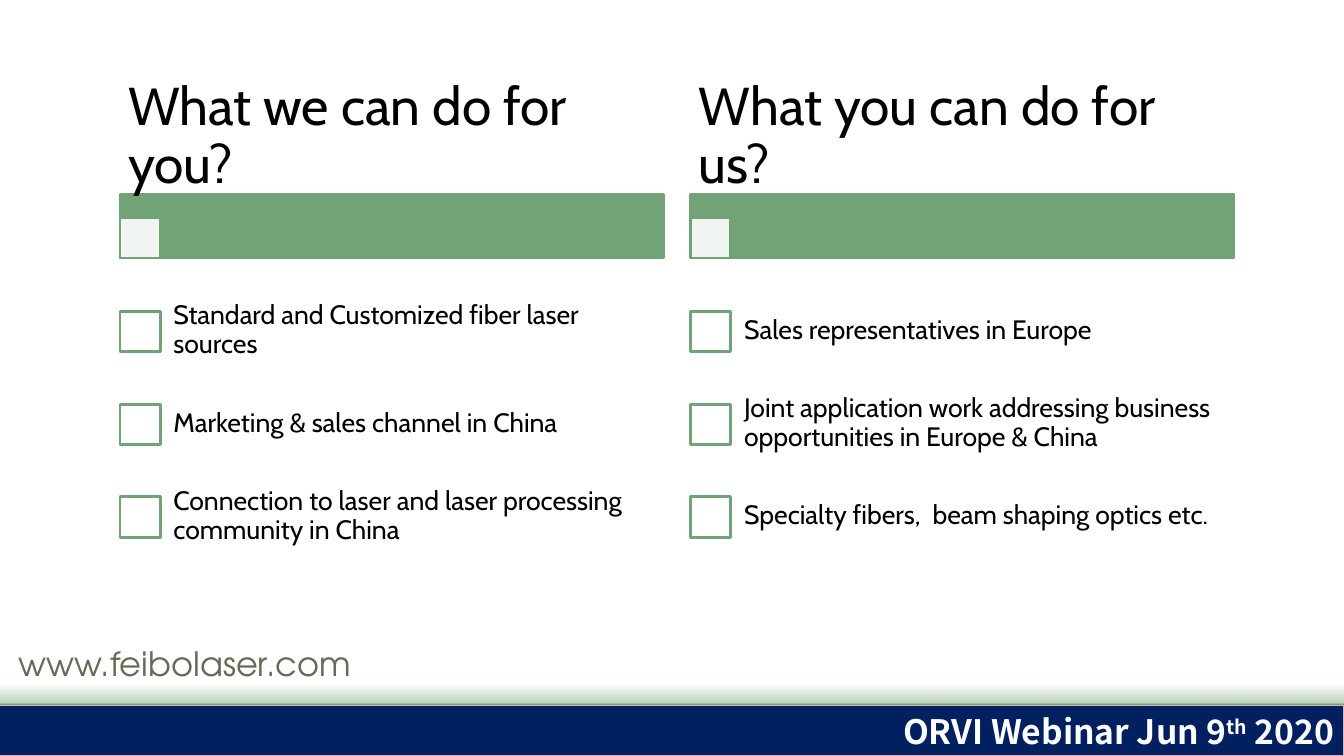
"""Build the slide on what each partner can do for the other."""
import pptx
import pptx.dml.color
import pptx.enum.shapes
import pptx.enum.text
import pptx.oxml.ns
import pptx.util
from lxml import etree
from pptx.util import Inches

COLUMNS = [
    ("What we can do for you?", [
        "Standard and Customized fiber laser sources",
        "Marketing & sales channel in China",
        "Connection to laser and laser processing community in China",
    ]),
    ("What you can do for us?", [
        "Sales representatives in Europe",
        "Joint application work addressing business opportunities in Europe & China",
        "Specialty fibers,  beam shaping optics etc.",
    ]),
]
WEBSITE = "www.feibolaser.com"
EVENT = [("ORVI Webinar Jun 9", False), ("th", True), (" 2020", False)]

COLORS = {
    "green": "72A376", "pale": "B4CDB6", "white": "FFFFFF", "black": "000000",
    "navy": "002060", "rose": "E4B2B2", "olive": "676A55",
}
BODY_FONT, WEB_FONT, EVENT_FONT = "Cabin", "TeX Gyre Adventor", "Noto Sans CJK SC"
SLIDE_WIDTH, SLIDE_HEIGHT = 13.33, 7.5
COLUMN_LEFT, COLUMN_STEP, COLUMN_WIDTH = 1.19, 5.66, 5.39
HEADING_TOP, HEADING_HEIGHT = 0.79, 1.14
BAR_TOP, BAR_HEIGHT = 1.93, 0.63
ITEM_TOP, ITEM_HEIGHT, ITEM_INDENT = 2.82, 0.92, 0.38
SQUARE = 0.4
FOOTER_TOP, FADE_HEIGHT = 7.0, 0.22
MIDDLE = pptx.enum.text.MSO_ANCHOR.MIDDLE


def rgb(name):
    return pptx.dml.color.RGBColor.from_string(COLORS[name])


def add_rectangle(slide, left, top, width, height, fill, line=None, points=2):
    kind = pptx.enum.shapes.MSO_SHAPE.RECTANGLE
    box = slide.shapes.add_shape(kind, Inches(left), Inches(top), Inches(width), Inches(height))
    box.shadow.inherit = False
    box.fill.solid()
    box.fill.fore_color.rgb = rgb(fill)
    if line:
        box.line.color.rgb = rgb(line)
        box.line.width = pptx.util.Pt(points)
    else:
        box.line.fill.background()
    return box


def style_span(span, font, size, color, bold=False):
    span.font.name = font
    span.font.size = pptx.util.Pt(size)
    span.font.color.rgb = rgb(color)
    span.font.bold = bold


def write_text(box, text, font, size, color, side=0.1, edge=0.05, anchor=MIDDLE):
    frame = box.text_frame
    frame.text = text
    frame.word_wrap = True
    frame.auto_size = pptx.enum.text.MSO_AUTO_SIZE.NONE
    frame.vertical_anchor = anchor
    frame.margin_left = frame.margin_right = Inches(side)
    frame.margin_top = frame.margin_bottom = Inches(edge)
    para = frame.paragraphs[0]
    para.space_before = pptx.util.Pt(0)
    para.line_spacing = 0.9
    style_span(para.runs[0], font, size, color)


def add_text(slide, left, top, width, height):
    return slide.shapes.add_textbox(Inches(left), Inches(top), Inches(width), Inches(height))


def add_footer(slide):
    fade = add_rectangle(slide, 0, FOOTER_TOP - FADE_HEIGHT, SLIDE_WIDTH, FADE_HEIGHT, "white")
    fade.fill.gradient()
    fade.fill.gradient_angle = 270
    for stop, name in zip(fade.fill.gradient_stops, ("white", "pale")):
        stop.color.rgb = rgb(name)
    add_rectangle(slide, 0, FOOTER_TOP - 0.02, SLIDE_WIDTH, 0.02, "green")
    band = add_rectangle(slide, 0, FOOTER_TOP, SLIDE_WIDTH, SLIDE_HEIGHT - FOOTER_TOP,
                         "navy", "rose", 0.75)
    band.text_frame.vertical_anchor = MIDDLE
    para = band.text_frame.paragraphs[0]
    para.alignment = pptx.enum.text.PP_ALIGN.RIGHT
    for text, raised in EVENT:
        span = para.add_run()
        span.text = text
        style_span(span, EVENT_FONT, 24, "white", bold=True)
        if raised:
            span.font._element.set("baseline", "30000")
    website = add_text(slide, 0.09, 6.34, 7.23, 0.47)
    write_text(website, WEBSITE, WEB_FONT, 24, "olive")
    website.text_frame.paragraphs[0].line_spacing = 1.0


def add_column(slide, left, heading, title, items):
    add_rectangle(slide, left, BAR_TOP, COLUMN_WIDTH, BAR_HEIGHT, "green", "green")
    square_top = BAR_TOP + BAR_HEIGHT - SQUARE
    marker = add_rectangle(slide, left, square_top, SQUARE, SQUARE, "white", "green")
    color = marker.fill._xPr.find(".//" + pptx.oxml.ns.qn("a:srgbClr"))
    etree.SubElement(color, pptx.oxml.ns.qn("a:alpha"), val="90000")
    heading.left, heading.top = Inches(left), Inches(HEADING_TOP)
    heading.width, heading.height = Inches(COLUMN_WIDTH), Inches(HEADING_HEIGHT)
    write_text(heading, title, BODY_FONT, 38, "black", side=0.08)
    slide.shapes._spTree.append(heading._element)
    for row, item in enumerate(items):
        top = ITEM_TOP + row * ITEM_HEIGHT
        add_rectangle(slide, left, top + (ITEM_HEIGHT - SQUARE) / 2 + 0.01,
                      SQUARE, SQUARE, "white", "green")
        label = add_text(slide, left + ITEM_INDENT, top, COLUMN_WIDTH - ITEM_INDENT, ITEM_HEIGHT)
        write_text(label, item, BODY_FONT, 19, "black", side=0.15, edge=0.15)


def main():
    deck = pptx.Presentation()
    deck.slide_width, deck.slide_height = Inches(SLIDE_WIDTH), Inches(SLIDE_HEIGHT)
    slide = deck.slides.add_slide(deck.slide_layouts.get_by_name("Comparison"))
    holders = {holder.placeholder_format.idx: holder for holder in slide.placeholders}
    headings = [holders.pop(1), holders.pop(3)]
    for holder in holders.values():
        holder._element.getparent().remove(holder._element)
    add_footer(slide)
    for number, (heading, (title, items)) in enumerate(zip(headings, COLUMNS)):
        add_column(slide, COLUMN_LEFT + number * COLUMN_STEP, heading, title, items)
    deck.save("out.pptx")


if __name__ == "__main__":
    main()
